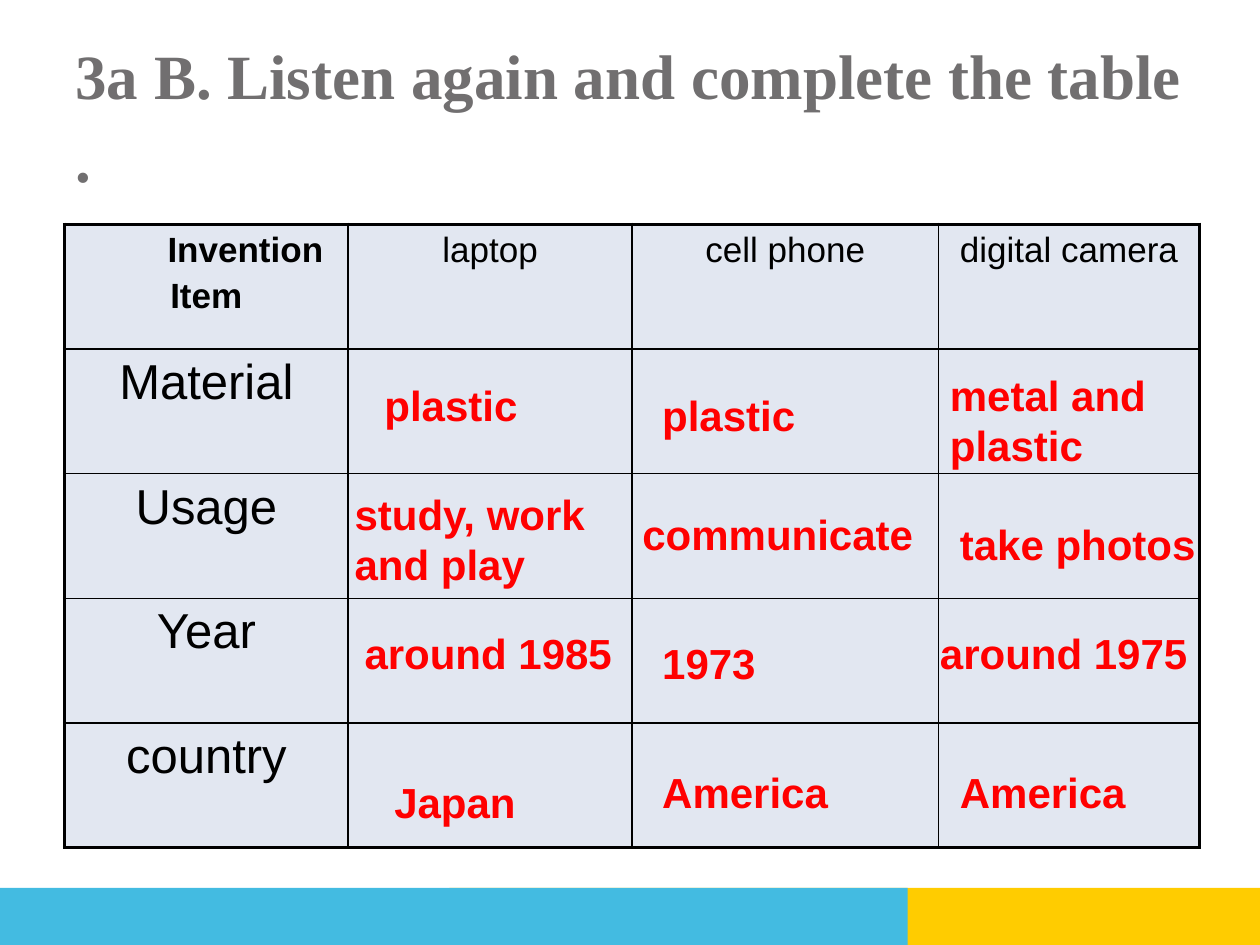
from lxml.etree import SubElement
from pptx import Presentation
from pptx.dml.color import RGBColor
from pptx.enum.shapes import MSO_SHAPE
from pptx.enum.text import MSO_ANCHOR, PP_ALIGN
from pptx.oxml.ns import qn
from pptx.util import Inches, Mm, Pt

BLACK = RGBColor(0x00, 0x00, 0x00)
RED = RGBColor(0xFF, 0x00, 0x00)
GREY = RGBColor(0x71, 0x6F, 0x70)
BLUE = RGBColor(0x43, 0xBB, 0xE1)
YELLOW = RGBColor(0xFF, 0xCC, 0x00)
CELL = RGBColor(0x97, 0xAB, 0xCE)

COLUMNS = [28.6, 28.6, 30.9, 26.3]
ROW_HEIGHT = 12.57
HEADERS = ["Invention\nItem", "laptop", "cell phone", "digital camera"]
ITEMS = ["Material", "Usage", "Year", "country"]
ANSWERS = [
    ("plastic", 37, 37, 24),
    ("plastic", 65, 38, 25),
    ("metal and plastic", 94, 36, 23),
    ("study, work and play", 34, 48, 29),
    ("communicate", 63, 50, 30),
    ("take photos", 95, 51, 29),
    ("around 1985", 35, 62, 30),
    ("1973", 65, 63, 24),
    ("around 1975", 93, 62, 30.5),
    ("Japan", 38, 77, 21),
    ("America", 65, 76, 26),
    ("America", 95, 76, 25),
]


class Deck:
    """Slide builder whose lengths are counted on a grid of 2 mm squares."""

    def __init__(self):
        self.prs = Presentation()
        self.prs.slide_width, self.prs.slide_height = Inches(10), Inches(7.5)
        self.s = self.prs.slides.add_slide(self.prs.slide_layouts[6])

    def grid(self, *counts):
        return [Mm(2 * n) for n in counts]

    def style(self, p, size, color, bold=False, name="Arial"):
        p.font.size, p.font.bold, p.font.name = Pt(size), bold, name
        p.font.color.rgb = color

    def bar(self, x, y, w, h, color):
        sp = self.s.shapes.add_shape(MSO_SHAPE.RECTANGLE, *self.grid(x, y, w, h))
        sp.shadow.inherit = False
        sp.fill.solid()
        sp.fill.fore_color.rgb = color
        sp.line.fill.background()

    def text(self, text, x, y, w, h, size, color, name="Arial"):
        tf = self.s.shapes.add_textbox(*self.grid(x, y, w, h)).text_frame
        tf.word_wrap = True
        p = tf.paragraphs[0]
        p.text = text
        self.style(p, size, color, True, name)
        return tf

    def title(self, text):
        tf = self.text(text, 6.35, 3.8, 114.3, 15.9, 36, GREY, "Times New Roman")
        tf.vertical_anchor = MSO_ANCHOR.MIDDLE
        r = tf.paragraphs[0].add_run()
        r.text = " "
        r.font.size, r.font.bold, r.font.name = Pt(40), False, "Arial"

    def borders(self, cell, heavy):
        tcPr = cell._tc.get_or_add_tcPr()
        for i, side in enumerate("LRTB"):
            width = Pt(2.25 if side in heavy else 1)
            ln = SubElement(tcPr, qn(f"a:ln{side}"), w=str(width))
            fill = SubElement(ln, qn("a:solidFill"))
            SubElement(fill, qn("a:srgbClr"), val=str(BLACK))
            tcPr.insert(i, ln)

    def fill(self, cell, color, opacity):
        cell.fill.solid()
        cell.fill.fore_color.rgb = color
        clr = cell._tc.tcPr.find(".//" + qn("a:srgbClr"))
        SubElement(clr, qn("a:alpha"), val=str(opacity * 1000))

    def table(self, x, y, columns, row_height, rows):
        last_row, last_col = len(rows) - 1, len(columns) - 1
        box = self.grid(x, y, sum(columns), row_height * len(rows))
        table = self.s.shapes.add_table(len(rows), len(columns), *box).table
        table.first_row = table.horz_banding = False
        for col, width in zip(table.columns, self.grid(*columns)):
            col.width = width
        for i, row in enumerate(rows):
            for j, text in enumerate(row):
                cell = table.cell(i, j)
                cell.text = text
                self.fill(cell, CELL, 28)
                edges = zip("LRTB", (j == 0, j == last_col, i == 0, i == last_row))
                self.borders(cell, [side for side, outer in edges if outer])
                for p in cell.text_frame.paragraphs:
                    p.alignment = PP_ALIGN.CENTER
                    self.style(p, 28 if i else 20, BLACK, i == j == 0)
        return table

    def corner(self, cell):
        first, second = cell.text_frame.paragraphs
        first._p.get_or_add_pPr().set("marL", str(Inches(0.62)))
        second.space_before = Pt(4)


def main():
    deck = Deck()
    deck.bar(45.3, 89.5, 81.7, 5.75, YELLOW)
    deck.bar(0, 89.5, 91.5, 5.75, BLUE)
    deck.title("3a B. Listen again and complete the table .")
    rows = [HEADERS] + [[item, "", "", ""] for item in ITEMS]
    table = deck.table(6.5, 22.6, COLUMNS, ROW_HEIGHT, rows)
    deck.corner(table.cell(0, 0))
    for text, x, y, w in ANSWERS:
        height = 11.4 if text.count(" ") > 1 else 6.4
        deck.text(text, x + 0.5, y + 0.6, w, height, 24, RED)
    deck.prs.save("out.pptx")


if __name__ == "__main__":
    main()
